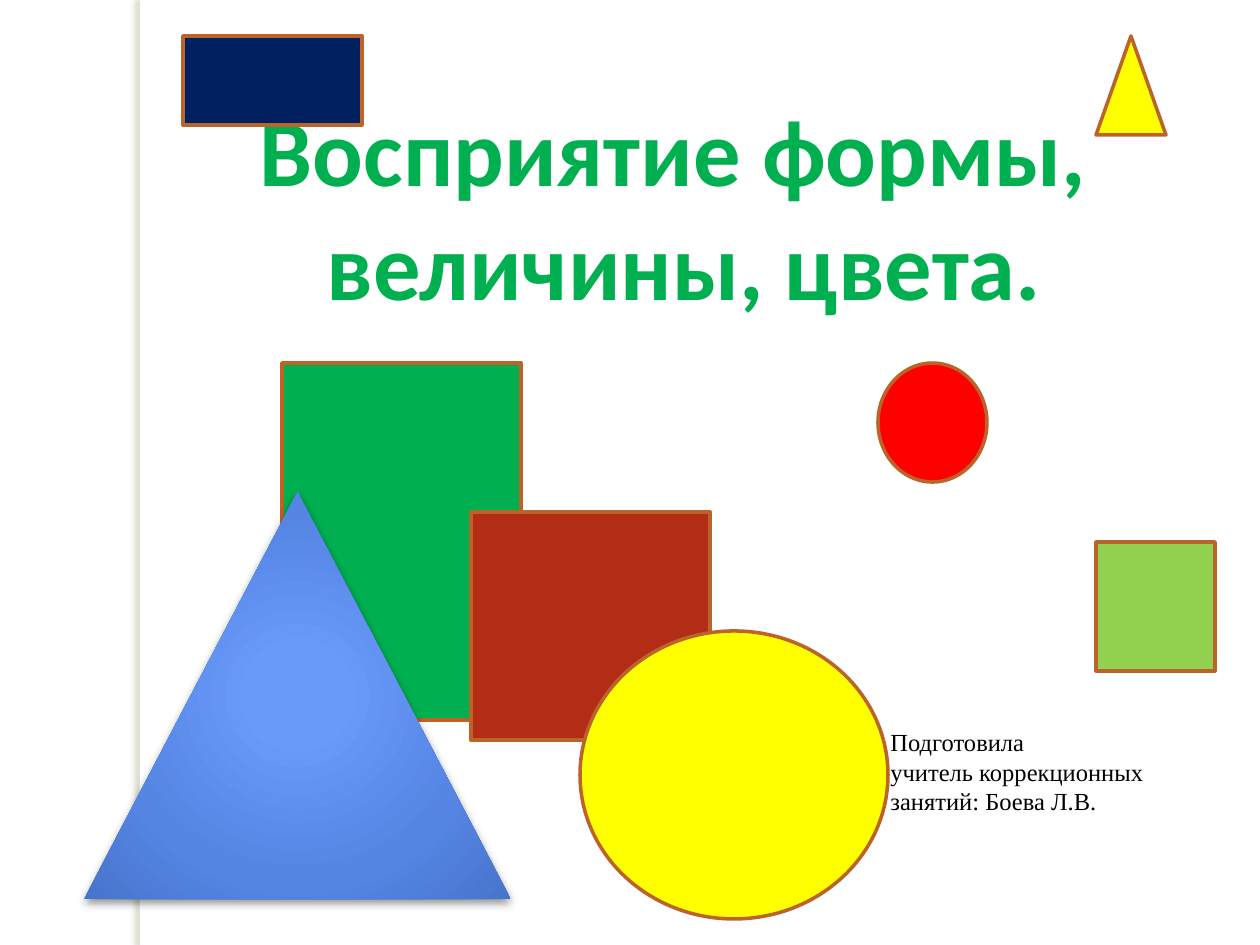
from lxml import etree
from pptx import Presentation
from pptx.dml.color import RGBColor
from pptx.enum import shapes, text
from pptx.oxml import ns
from pptx.util import Pt

PX = 914400 / 126

THEME = {
    "outline": "BC6329", "outline_width": 2,
    "strip": "FFFFFF", "strip_shadow": "817B4C", "cone_shadow": "000000",
    "green": "00B050", "brick": "B32C16", "yellow": "FFFF00",
    "navy": "002060", "lime": "92D050", "red": "FF0000",
    "gradient": {0: "6A99FA", 15: "6999F9", 62: "5686E4", 97: "4876CE", 100: "4373CD"},
    "title": {"name": "Calibri", "size": Pt(54), "bold": True},
    "title_color": "00B050",
    "note": {"name": "Times New Roman", "size": Pt(14)},
    "note_color": "000000",
}
KIND = shapes.MSO_SHAPE

deck = Presentation()
deck.slide_width, deck.slide_height = round(1260 * PX), round(945 * PX)
page = deck.slides.add_slide(deck.slide_layouts[6])


def add_figure(kind, place, color=None, outlined=True):
    figure = page.shapes.add_shape(kind, *(round(n * PX) for n in place))
    figure.shadow.inherit = False
    if color:
        figure.fill.solid()
        figure.fill.fore_color.rgb = RGBColor.from_string(color)
    else:
        figure.fill.background()
    if outlined:
        figure.line.color.rgb = RGBColor.from_string(THEME["outline"])
        figure.line.width = Pt(THEME["outline_width"])
    else:
        figure.line.fill.background()
    return figure


def add_shadow(figure, color, opacity, blur, distance, angle):
    effects = figure.element.spPr.find(ns.qn("a:effectLst"))
    shadow = etree.SubElement(
        effects, ns.qn("a:outerShdw"), blurRad=str(Pt(blur)), dist=str(Pt(distance)),
        dir=str(angle * 60000), algn="ctr", rotWithShape="0")
    tint = etree.SubElement(shadow, ns.qn("a:srgbClr"), val=color)
    etree.SubElement(tint, ns.qn("a:alpha"), val=str(opacity * 1000))


# Side strip
strip = add_figure(KIND.RECTANGLE, (140, 0, 10, 945), THEME["strip"], outlined=False)
add_shadow(strip, THEME["strip_shadow"], 25, 3, 3, 180)

# Title and author note
for role, place, wrap, align, lines in [
    ("title", (233, 86, 881, 242), False, text.PP_ALIGN.CENTER,
     ["Восприятие формы,", " величины, цвета."]),
    ("note", (878, 721, 348, 102), True, text.PP_ALIGN.LEFT,
     ["Подготовила", "учитель коррекционных", "занятий: Боева Л.В."]),
]:
    box = page.shapes.add_textbox(*(round(n * PX) for n in place))
    frame = box.text_frame
    frame.word_wrap = wrap
    frame.auto_size = text.MSO_AUTO_SIZE.SHAPE_TO_FIT_TEXT
    for number, line in enumerate(lines):
        para = frame.add_paragraph() if number else frame.paragraphs[0]
        para.alignment = align
        span = para.add_run()
        span.text = line
        for name, value in THEME[role].items():
            setattr(span.font, name, value)
        span.font.color.rgb = RGBColor.from_string(THEME[role + "_color"])

# Large rectangles
add_figure(KIND.RECTANGLE, (282, 363, 239, 357), THEME["green"])
add_figure(KIND.RECTANGLE, (471, 512, 239, 228), THEME["brick"])

# Blue triangle with a radial gradient
triangle = add_figure(KIND.ISOSCELES_TRIANGLE, (84, 492, 427, 407), outlined=False)
gradient = etree.Element(ns.qn("a:gradFill"), rotWithShape="1")
stops = etree.SubElement(gradient, ns.qn("a:gsLst"))
for position, color in THEME["gradient"].items():
    stop = etree.SubElement(stops, ns.qn("a:gs"), pos=str(position * 1000))
    etree.SubElement(stop, ns.qn("a:srgbClr"), val=color)
radial = etree.SubElement(gradient, ns.qn("a:path"), {"path": "circle"})
etree.SubElement(radial, ns.qn("a:fillToRect"), dict.fromkeys("ltrb", "50000"))
properties = triangle.element.spPr
properties.replace(properties.find(ns.qn("a:noFill")), gradient)
add_shadow(triangle, THEME["cone_shadow"], 43, 5, 2, 90)

# Large circle and the small figures
for kind, place, color in [
    (KIND.OVAL, (580, 631, 308, 288), "yellow"),
    (KIND.ISOSCELES_TRIANGLE, (1096, 36, 70, 99), "yellow"),
    (KIND.RECTANGLE, (183, 36, 179, 89), "navy"),
    (KIND.RECTANGLE, (1096, 542, 119, 129), "lime"),
    (KIND.OVAL, (878, 363, 109, 119), "red"),
]:
    add_figure(kind, place, THEME[color])

deck.save("out.pptx")
